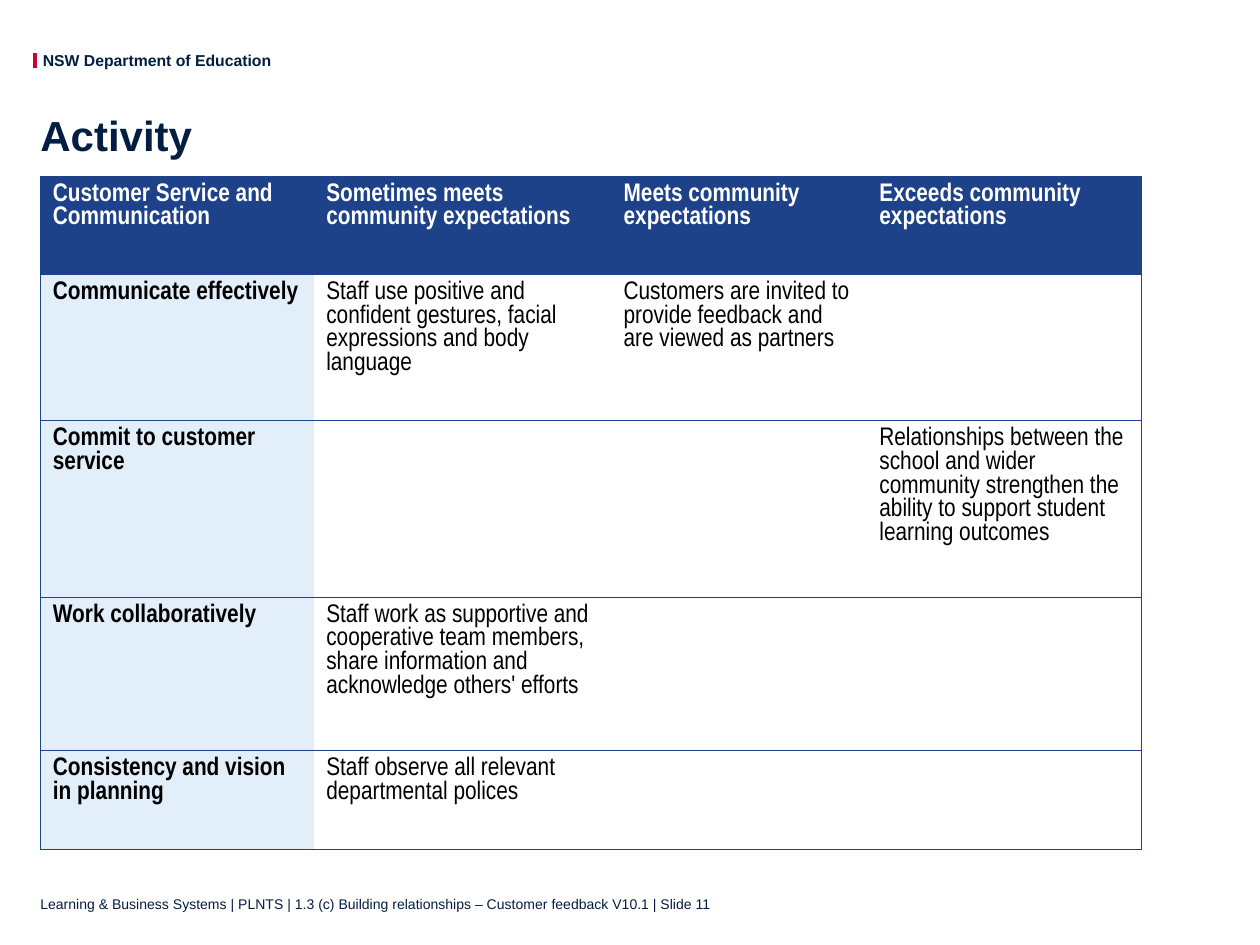
"""Build the slide with the customer service activity table."""
from dataclasses import dataclass

import pptx
import pptx.dml.color
import pptx.enum.shapes
import pptx.enum.text
import pptx.oxml
import pptx.oxml.ns
import pptx.util
from pptx.util import Inches

NAVY, BLUE, PALE, RED = "041E42", "1D428A", "E2EEFA", "CE0037"
ANCHOR = pptx.enum.text.MSO_ANCHOR
LEFT = 0.32


@dataclass
class Row:
    height: float
    cells: tuple[str, ...]


@dataclass
class Label:
    text: str
    box: tuple[float, float, float, float]
    size: float
    bold: bool
    anchor: ANCHOR
    wrap: bool


WIDTHS = (2.17, 2.36, 2.03, 2.18)
ROWS = (
    Row(0.78, ("Customer Service and Communication",
               "Sometimes meets community expectations",
               "Meets community expectations",
               "Exceeds community expectations")),
    Row(1.16, ("Communicate effectively",
               "Staff use positive and confident gestures, facial expressions and body language",
               "Customers are invited to provide feedback and are viewed as partners", "")),
    Row(1.4, ("Commit to customer service", "", "",
              "Relationships between the school and wider community strengthen "
              "the ability to support student learning outcomes")),
    Row(1.22, ("Work collaboratively",
               "Staff work as supportive and cooperative team members, "
               "share information and acknowledge others' efforts", "", "")),
    Row(0.78, ("Consistency and vision in planning",
               "Staff observe all relevant departmental polices", "", "")),
)
LABELS = (
    Label("NSW Department of Education", (0.34, 0.4, 1.83, 0.15), 9, True, ANCHOR.TOP, False),
    Label("Learning & Business Systems | PLNTS | 1.3 (c) Building relationships "
          "– Customer feedback V10.1 | Slide 11",
          (LEFT, 6.84, 9.43, 0.4), 8, False, ANCHOR.BOTTOM, True),
)


def rgb(code: str) -> pptx.dml.color.RGBColor:
    """Turn a hex string into a colour."""
    return pptx.dml.color.RGBColor.from_string(code)


def style(para, size: float, code: str, bold: bool, face: str = "Arial") -> None:
    """Set the font of a paragraph."""
    font = para.font
    font.name, font.size, font.bold = face, pptx.util.Pt(size), bold
    font.color.rgb = rgb(code)


def fit(shape, box: tuple[float, ...], anchor: ANCHOR, wrap: bool = True):
    """Place a text shape without margins and return its frame."""
    shape.left, shape.top, shape.width, shape.height = map(Inches, box)
    frame = shape.text_frame
    frame.margin_left = frame.margin_right = frame.margin_top = frame.margin_bottom = 0
    frame.vertical_anchor, frame.word_wrap = anchor, wrap
    return frame


def add_label(slide, label: Label) -> None:
    """Add one line of running text."""
    frame = fit(slide.shapes.add_textbox(0, 0, 0, 0), label.box, label.anchor, label.wrap)
    frame.text = label.text
    style(frame.paragraphs[0], label.size, NAVY, label.bold)


def add_mark(slide) -> None:
    """Add the red bar beside the department name."""
    line = slide.shapes.add_connector(
        pptx.enum.shapes.MSO_CONNECTOR.STRAIGHT,
        Inches(0.28), Inches(0.42), Inches(0.28), Inches(0.54))
    line.line.color.rgb = rgb(RED)
    line.line.width = pptx.util.Pt(2.5)
    line._element.spPr.append(pptx.oxml.parse_xml(
        f'<a:effectLst {pptx.oxml.ns.nsdecls("a")}/>'))


def edge(cell, sides: str) -> None:
    """Draw the named sides of a cell and clear the others."""
    props = cell._tc.get_or_add_tcPr()
    for side in "LRTB":
        paint = (f'<a:solidFill><a:srgbClr val="{BLUE}"/></a:solidFill>'
                 if side in sides else "<a:noFill/>")
        props.append(pptx.oxml.parse_xml(
            f'<a:ln{side} {pptx.oxml.ns.nsdecls("a")} w="6350">{paint}</a:ln{side}>'))


def add_cell(cell, text: str, row: int, col: int) -> None:
    """Fill one table cell by its place in the grid."""
    head, first = row == 0, col == 0
    edge(cell, "TB" + "L" * first + "R" * (col == len(WIDTHS) - 1))
    if head or first:
        cell.fill.solid()
        cell.fill.fore_color.rgb = rgb(BLUE if head else PALE)
    else:
        cell.fill.background()
    cell.text = text
    style(cell.text_frame.paragraphs[0], 14.5, "FFFFFF" if head else "000000",
          head or first, "Arial Narrow")


def add_grid(slide) -> None:
    """Add the expectations table."""
    table = slide.shapes.add_table(
        len(ROWS), len(WIDTHS), Inches(LEFT), Inches(1.4),
        Inches(sum(WIDTHS)), Inches(sum(row.height for row in ROWS))).table
    table.first_row = table.horz_banding = False
    for col, width in enumerate(WIDTHS):
        table.columns[col].width = Inches(width)
    for i, row in enumerate(ROWS):
        table.rows[i].height = Inches(row.height)
        for col, text in enumerate(row.cells):
            add_cell(table.cell(i, col), text, i, col)


def main() -> None:
    """Build and save the deck."""
    deck = pptx.Presentation()
    deck.slide_width, deck.slide_height = Inches(10), Inches(7.5)
    slide = deck.slides.add_slide(deck.slide_layouts[5])
    add_mark(slide)
    frame = fit(slide.shapes.title, (LEFT, 0.82, 9.43, 0.55), ANCHOR.MIDDLE)
    frame.text = "Activity"
    title = frame.paragraphs[0]
    title.alignment = pptx.enum.text.PP_ALIGN.LEFT
    title.line_spacing = 0.9
    style(title, 24, NAVY, True)
    add_grid(slide)
    for label in LABELS:
        add_label(slide, label)
    deck.save("out.pptx")


if __name__ == "__main__":
    main()
